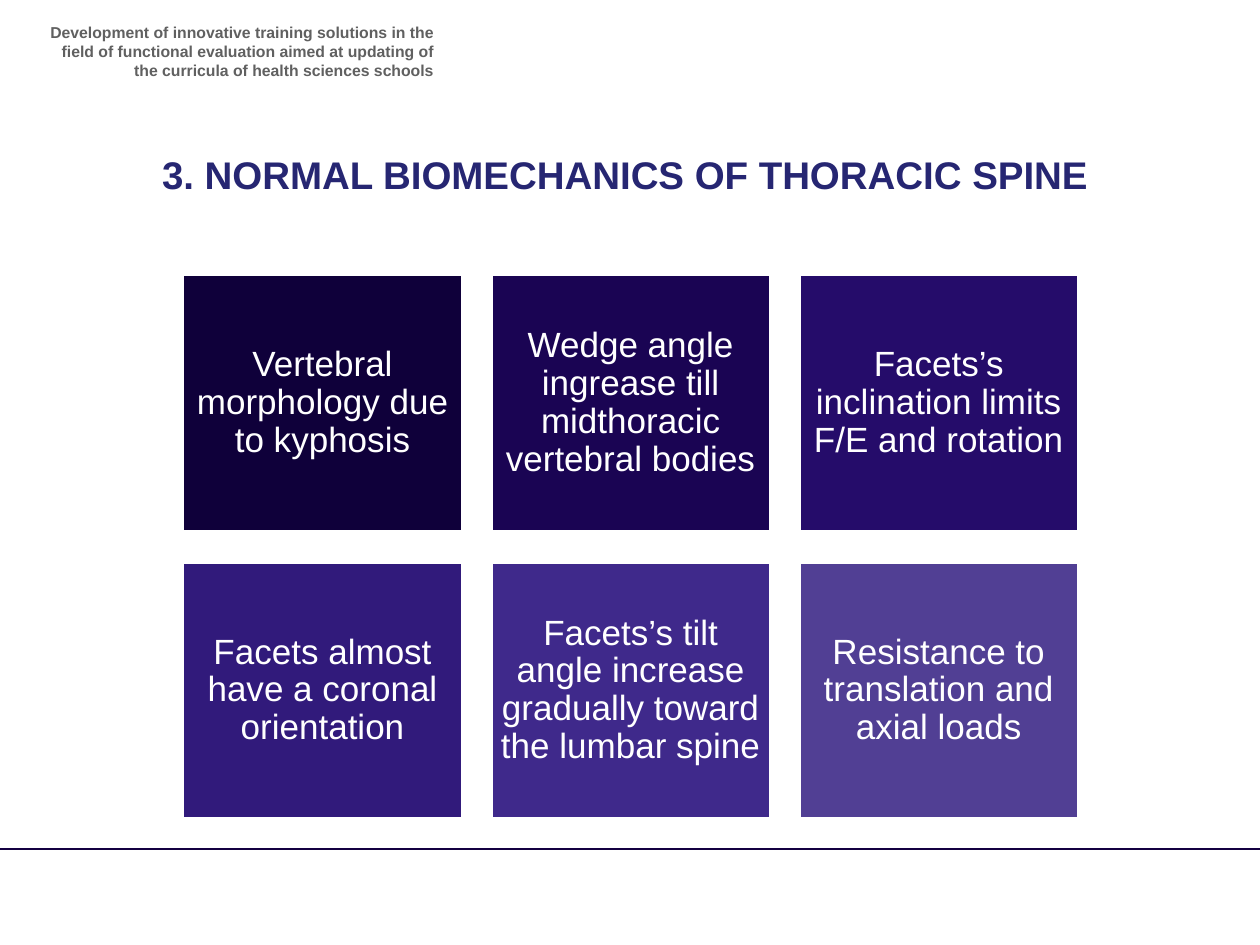
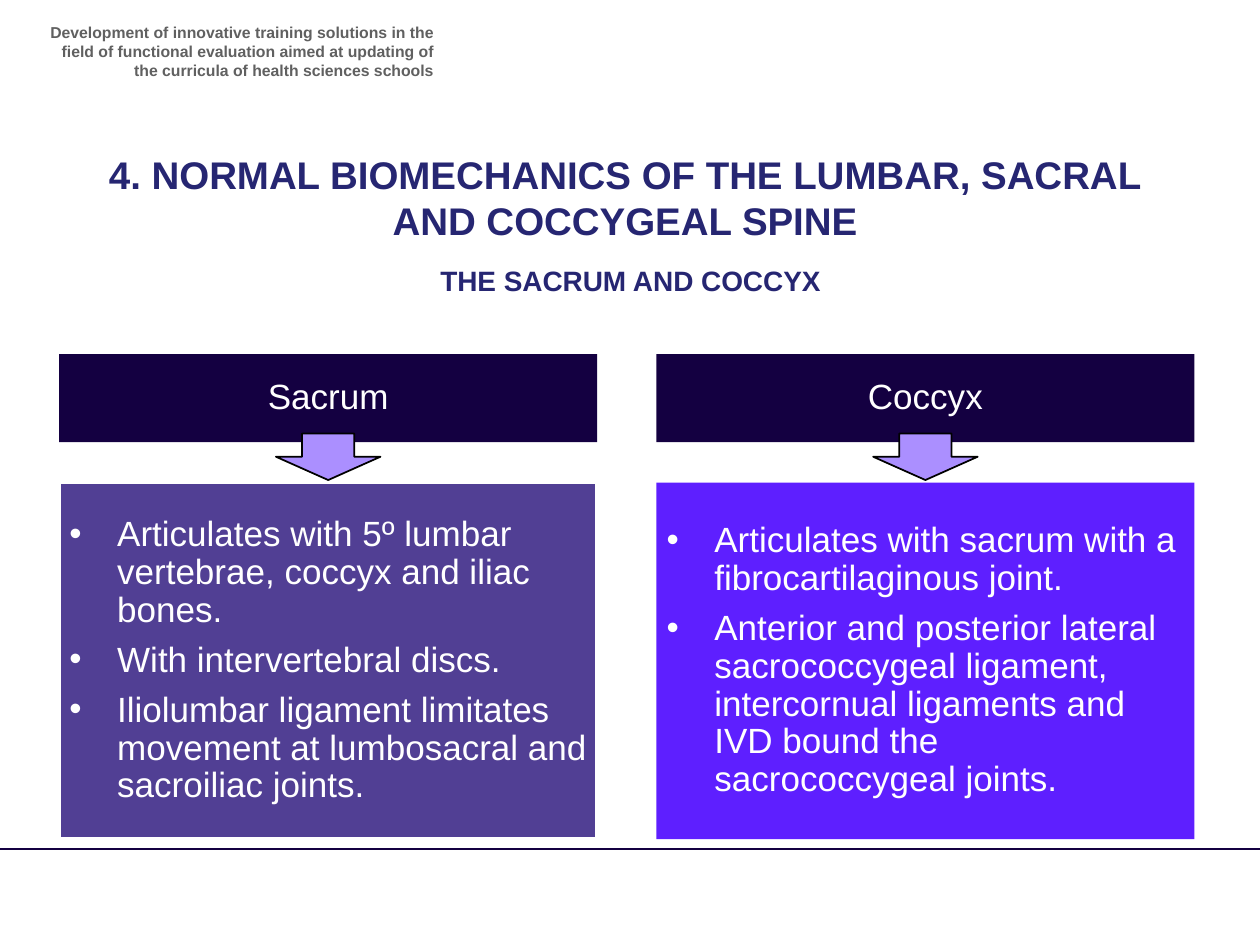
from pptx import Presentation
from pptx.dml.color import RGBColor as Rgb
from pptx.enum.shapes import MSO_CONNECTOR as Link, MSO_SHAPE as Kind
from pptx.enum.text import MSO_ANCHOR as Anchor, MSO_AUTO_SIZE as Fit, PP_ALIGN as Align
from pptx.oxml.ns import qn
from pptx.util import Inches, Pt
from lxml.etree import SubElement as Sub

WIDE, HIGH = Inches(10), Inches(7.5)
FONT = "Arial"
WHITE, BLACK, GREY = "FFFFFF", "000000", "606060"
NAVY, INK, LILAC = "262672", "140041", "AB8FFF"
HEADER = ("Development of innovative training solutions in the ﬁeld of functional "
          "evaluation aimed at updating of the curricula of health sciences schools")
TILES = [
    ("Vertebral morphology due to kyphosis", "0F003A"),
    ("Wedge angle ingrease till midthoracic vertebral bodies", "1A0453"),
    ("Facets’s inclination limits F/E and rotation", "250C6A"),
    ("Facets almost have a coronal orientation", "311A7B"),
    ("Facets’s tilt angle increase gradually toward the lumbar spine", "3F298B"),
    ("Resistance to translation and axial loads", "513F94"),
]
BONES = [
    ("Sacrum", "513F94", WHITE, [
        "Articulates with 5º lumbar vertebrae, coccyx and iliac bones.",
        "With intervertebral discs.",
        "Iliolumbar ligament limitates movement at lumbosacral and sacroiliac joints.",
    ]),
    ("Coccyx", "5E1FFF", None, [
        "Articulates with sacrum with a fibrocartilaginous joint.",
        "Anterior and posterior lateral sacrococcygeal ligament, intercornual "
        "ligaments and IVD bound the sacrococcygeal joints.",
    ]),
]


def color(code):
    return Rgb.from_string(code)


def area(left, top, width, height):
    return [int(whole * share / 100) for whole, share in
            zip((WIDE, HIGH, WIDE, HIGH), (left, top, width, height))]


def place(shape, box):
    shape.left, shape.top, shape.width, shape.height = area(*box)


def paint(shape, fill, line=None, width=2):
    shape.fill.solid()
    shape.fill.fore_color.rgb = color(fill)
    if line:
        shape.line.color.rgb = color(line)
        shape.line.width = Pt(width)
    else:
        shape.line.fill.background()


def bullet(para):
    props = para._p.get_or_add_pPr()
    props.set("marL", str(Inches(0.38)))
    props.set("indent", str(-Inches(0.38)))
    tint = Sub(Sub(props, qn("a:buClr")), qn("a:srgbClr"))
    tint.set("val", WHITE)
    Sub(props, qn("a:buFont")).set("typeface", FONT)
    Sub(props, qn("a:buChar")).set("char", "•")


def write(shape, lines, size, tone, align=Align.CENTER, bold=False,
          anchor=Anchor.TOP, pads=(0.1, 0.05), space=1.0, dots=False):
    frame = shape.text_frame
    frame.word_wrap = True
    frame.auto_size = Fit.NONE
    frame.vertical_anchor = anchor
    frame.margin_left = frame.margin_right = Inches(pads[0])
    frame.margin_top = frame.margin_bottom = Inches(pads[1])
    for num, line in enumerate(lines):
        para = frame.add_paragraph() if num else frame.paragraphs[0]
        if dots:
            bullet(para)
        para.alignment = align
        para.line_spacing = space
        para.space_before = Pt(7 if num else 0)
        run = para.add_run()
        run.text = line
        font = run.font
        font.name, font.size, font.bold = FONT, Pt(size), bold
        font.color.rgb = color(tone)


def fill_in(shape, lines, **more):
    write(shape, lines, 20, WHITE, anchor=Anchor.MIDDLE,
          pads=(0.08, 0.08), space=0.9, **more)


def block(slide, kind, box, fill, line=None, width=2):
    shape = slide.shapes.add_shape(kind, *area(*box))
    shape.shadow.inherit = False
    paint(shape, fill, line, width)
    return shape


def label(slide, box, text, size, tone, align=Align.CENTER):
    note = slide.shapes.add_textbox(*area(*box))
    write(note, [text], size, tone, align, bold=True)


def start(deck, layout, title, height):
    slide = deck.slides.add_slide(deck.slide_layouts.get_by_name(layout))
    rule = slide.shapes.add_connector(
        Link.STRAIGHT, *area(0, 89.87, 100, 89.87))
    rule.line.color.rgb = color(INK)
    rule.line.width = Pt(1)
    Sub(rule._element.spPr, qn("a:effectLst"))
    label(slide, (2.8, 1.73, 32.6, 6.27), HEADER, 9, GREY, Align.RIGHT)
    head = slide.shapes.title
    place(head, (6.7, 15.33, 85.8, height))
    write(head, [title], 22, NAVY, bold=True)
    return slide


def thorax(deck):
    slide = start(deck, "Title Only", "3. NORMAL BIOMECHANICS OF THORACIC SPINE", 6.27)
    for num, (text, fill) in enumerate(TILES):
        row, col = divmod(num, 3)
        box = 14.5 + col * 24.45, 29.07 + row * 30.4, 22.2, 27.2
        fill_in(block(slide, Kind.RECTANGLE, box, fill, WHITE), [text])


def sacrum(deck):
    slide = start(deck, "Two Content",
                  "4. NORMAL BIOMECHANICS OF THE LUMBAR, SACRAL AND COCCYGEAL SPINE", 11.2)
    label(slide, (21.7, 27.2, 56.7, 4.93), "THE SACRUM AND COCCYX", 16, NAVY)
    wide, tip = 42.7, 8.3
    for col, (name, fill, line, facts) in enumerate(BONES):
        left = 4.7 + col * 47.4
        head = block(slide, Kind.RECTANGLE, (left, 37.47, wide, 9.33), INK)
        fill_in(head, [name])
        body = slide.placeholders[col + 1]
        place(body, (left, 51.07, wide, 37.73))
        paint(body, fill, line)
        fill_in(body, facts, align=Align.LEFT, dots=True)
        block(slide, Kind.DOWN_ARROW,
              (left + (wide - tip) / 2, 45.87, tip, 4.93), LILAC, BLACK, 1)


def main():
    deck = Presentation()
    deck.slide_width, deck.slide_height = WIDE, HIGH
    thorax(deck)
    sacrum(deck)
    deck.save("out.pptx")


if __name__ == "__main__":
    main()
